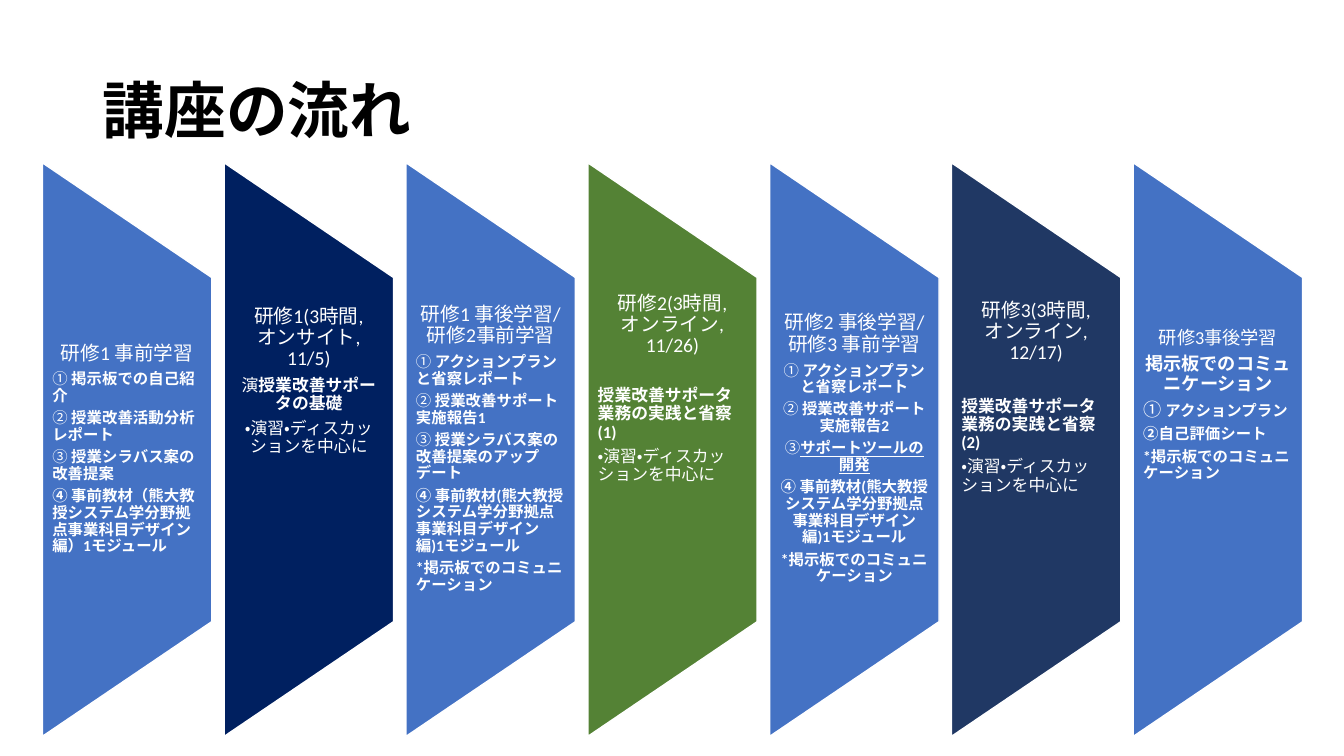
from dataclasses import dataclass

from lxml import etree
from pptx import Presentation
from pptx import util as u
from pptx.dml.color import RGBColor
from pptx.enum import lang, shapes, text
from pptx.oxml.ns import qn

COLORS = {"blue": "4472C4", "navy": "002060", "green": "548235",
          "slate": "203864", "white": "FFFFFF", "black": "000000"}
LEFT, CENTER = text.PP_ALIGN.LEFT, text.PP_ALIGN.CENTER
BAND_W, BAND_H, MIDDLE = 1.68, 5.69, 4.46
FIRST_LEFT, LAST_LEFT = 0.42, 11.24
TEXT_TOP, TEXT_BOTTOM = 2.75, 6.16


@dataclass
class Line:
    words: str
    size: int = 11
    align: int = LEFT
    gap: float = 0
    marker: int = 0


def heading(words, size=14):
    return Line(words, size, CENTER)


def practice(number, gap):
    return [Line(f"|授業改善サポータ業務の実践と省察({number})", 12, gap=gap),
            Line("・演習・ディスカッションを中心に", 12)]


MODULE = "|④ 事前教材(熊大教授システム学分野拠点事業科目デザイン編)1モジュール"
BOARD = "|*掲示板でのコミュニケーション"

STAGES = [
    ("blue", None, [
        heading("研修1 事前学習"),
        Line("① |掲示板での自己紹介"),
        Line("② |授業改善活動分析レポート"),
        Line("③ |授業シラバス案の改善提案"),
        Line("|④ 事前教材（熊大教授システム学分野拠点事業科目デザイン編）1モジュール")]),
    ("navy", 3.04, [
        heading("研修1(3時間,\nオンサイト,\n11/5)"),
        Line("演|授業改善サポータの基礎", 12, CENTER),
        Line("・演習・ディスカッションを中心に", 12, CENTER)]),
    ("blue", None, [
        heading("研修1 事後学習/ 研修2事前学習"),
        Line("① |アクションプランと省察レポート"),
        Line("② |授業改善サポート実施報告1"),
        Line("③ |授業シラバス案の改善提案のアップデート"),
        Line(MODULE),
        Line(BOARD)]),
    ("green", 2.91, [heading("研修2(3時間,\nオンライン,\n11/26)"), *practice(1, 16.5)]),
    ("blue", None, [
        heading("研修2 事後学習/ 研修3 事前学習"),
        Line("① |アクションプランと省察レポート", align=CENTER),
        Line("② |授業改善サポート実施報告2", align=CENTER),
        Line("③|_サポートツールの開発", align=CENTER),
        Line(MODULE, align=CENTER),
        Line(BOARD, align=CENTER)]),
    ("slate", 2.98, [heading("研修3(3時間,\nオンライン,\n12/17)"), *practice(2, 19)]),
    ("blue", 3.26, [
        heading("研修3事後学習", 13),
        Line("|掲示板でのコミュニケーション", 13, CENTER),
        Line("① |アクションプラン", marker=13),
        Line("|②自己評価シート"),
        Line(BOARD)]),
]


def apply(target, values):
    for name, value in values.items():
        setattr(target, name, value)


def rgb(name):
    return RGBColor.from_string(COLORS[name])


class Deck:
    body_font = "Calibri"
    title_font = "Noto Sans CJK JP"

    def __init__(self):
        self.presentation = Presentation()
        apply(self.presentation, {"slide_width": u.Inches(13.33),
                                  "slide_height": u.Inches(7.5)})
        self.slide = self.presentation.slides.add_slide(
            self.presentation.slide_layouts[5])

    def run(self, paragraph, words, font, size, color, bold, underline=False):
        for index, part in enumerate(words.split("\n")):
            if index:
                paragraph.add_line_break()
            run = paragraph.add_run()
            run.text = part
            apply(run.font, {"name": font, "size": u.Pt(size), "bold": bold,
                             "underline": underline,
                             "language_id": lang.MSO_LANGUAGE_ID.JAPANESE})
            run.font.color.rgb = rgb(color)
        return run

    def title(self, words):
        title = self.slide.shapes.title
        apply(title, {"left": u.Inches(0.92), "top": u.Inches(0.4),
                      "width": u.Inches(11.5), "height": u.Inches(1.45)})
        apply(title.text_frame, {"vertical_anchor": text.MSO_ANCHOR.MIDDLE,
                                 "auto_size": text.MSO_AUTO_SIZE.NONE})
        paragraph = title.text_frame.paragraphs[0]
        apply(paragraph, {"alignment": LEFT, "line_spacing": 0.9})
        run = self.run(paragraph, words, self.title_font, 44, "black", True)
        east_asian = etree.SubElement(run.font._element, qn("a:ea"))
        east_asian.set("typeface", self.title_font)

    def band(self, left, color):
        band = self.slide.shapes.add_shape(
            shapes.MSO_SHAPE.FLOWCHART_MANUAL_OPERATION,
            u.Inches(left + (BAND_W - BAND_H) / 2), u.Inches(MIDDLE - BAND_W / 2),
            u.Inches(BAND_H), u.Inches(BAND_W))
        band.rotation = 270
        band.shadow.inherit = False
        band.fill.solid()
        band.fill.fore_color.rgb = rgb(color)
        band.line.color.rgb = rgb("white")
        band.line.width = u.Pt(1)

    def lines(self, left, top, lines):
        start = top or TEXT_TOP
        frame = self.slide.shapes.add_textbox(
            u.Inches(left), u.Inches(start),
            u.Inches(BAND_W), u.Inches(TEXT_BOTTOM - start)).text_frame
        anchor = text.MSO_ANCHOR.TOP if top else text.MSO_ANCHOR.MIDDLE
        apply(frame, {"word_wrap": True, "vertical_anchor": anchor,
                      "margin_left": u.Inches(0.1), "margin_right": u.Inches(0.1),
                      "margin_top": 0, "margin_bottom": 0})
        for index, line in enumerate(lines):
            paragraph = frame.add_paragraph() if index else frame.paragraphs[0]
            apply(paragraph, {"alignment": line.align, "line_spacing": 0.9,
                              "space_before": u.Pt(line.gap),
                              "space_after": u.Pt(round(line.size * 0.37, 1))})
            paragraph.font.size = u.Pt(line.size)
            plain, _, strong = line.words.partition("|")
            if plain:
                self.run(paragraph, plain, self.body_font,
                         line.marker or line.size, "white", False)
            if strong:
                self.run(paragraph, strong.lstrip("_"), self.body_font, line.size,
                         "white", True, strong.startswith("_"))


def main():
    deck = Deck()
    deck.title("講座の流れ")
    pitch = (LAST_LEFT - FIRST_LEFT) / (len(STAGES) - 1)
    for index, (color, top, lines) in enumerate(STAGES):
        left = FIRST_LEFT + index * pitch
        deck.band(left, color)
        deck.lines(left, top, lines)
    deck.presentation.save("out.pptx")


if __name__ == "__main__":
    main()
